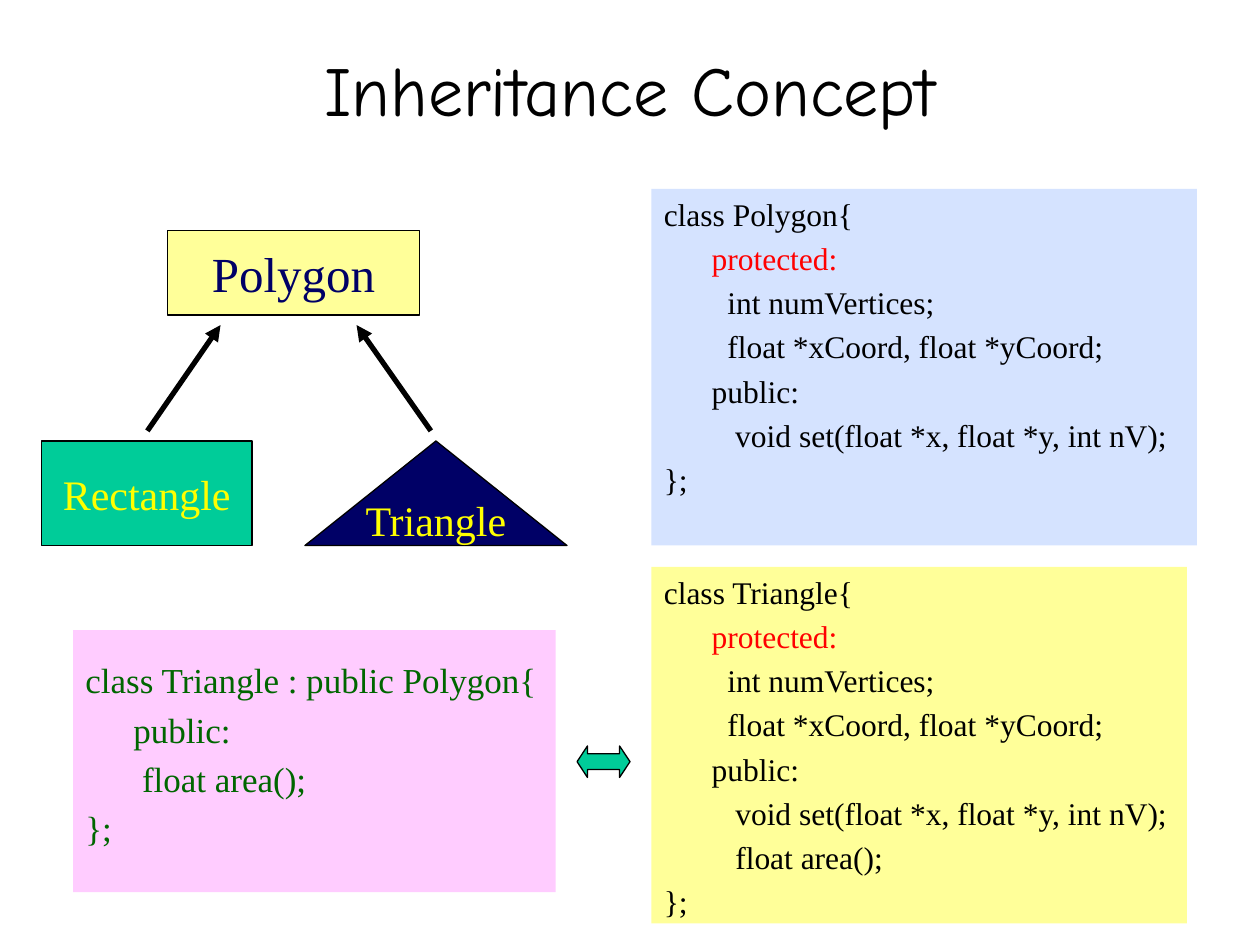
from pptx import Presentation
from pptx.dml.color import RGBColor
from pptx.enum import shapes, text
from pptx.oxml.ns import qn
from pptx.util import Inches, Pt
from lxml import etree

BLACK = RGBColor(0x00, 0x00, 0x00)
RED = RGBColor(0xFF, 0x00, 0x00)
NAVY = RGBColor(0x00, 0x00, 0x66)
TEAL = RGBColor(0x00, 0xCC, 0x99)
YELLOW = RGBColor(0xFF, 0xFF, 0x00)
CREAM = RGBColor(0xFF, 0xFF, 0x99)
PALE_BLUE = RGBColor(0xD5, 0xE3, 0xFF)
PINK = RGBColor(0xFF, 0xCC, 0xFF)
GREEN = RGBColor(0x00, 0x66, 0x00)

SERIF = "Times New Roman"
SHAPE = shapes.MSO_SHAPE
CODE_INDENT = Inches(0.38)

MEMBERS = [
    "\tprotected:",
    "\t  int numVertices;",
    "\t  float *xCoord, float *yCoord;",
    "\tpublic:",
    "\t   void set(float *x, float *y, int nV);",
]
POLYGON_CODE = ["class Polygon{", *MEMBERS, "};"]
FLAT_CODE = ["class Triangle{", *MEMBERS, "\t   float area();", "};"]
DERIVED_CODE = ["class Triangle : public Polygon{", "\tpublic:",
                "\t float area();", "};"]


def set_font(font, size, color, name=SERIF):
    for key, value in {"size": Pt(size), "name": name, "bold": False}.items():
        setattr(font, key, value)
    font.color.rgb = color


def add_box(s, kind, box, fill, outlined=True):
    sp = s.shapes.add_shape(kind, *map(Inches, box))
    sp.shadow.inherit = False
    sp.fill.solid()
    sp.fill.fore_color.rgb = fill
    if outlined:
        sp.line.color.rgb = BLACK
        sp.line.width = Pt(0.75)
    else:
        sp.line.fill.background()
    return sp


def add_node(s, kind, box, fill, label, size, color):
    tf = add_box(s, kind, box, fill).text_frame
    tf.word_wrap = False
    tf.vertical_anchor = text.MSO_ANCHOR.MIDDLE
    p = tf.paragraphs[0]
    p.alignment = text.PP_ALIGN.CENTER
    r = p.add_run()
    r.text = label
    set_font(r.font, size, color)


def add_arrow(s, parent, child):
    """Draw a line from parent to child with its arrowhead at the parent."""
    line = s.shapes.add_connector(shapes.MSO_CONNECTOR.STRAIGHT,
                                  *map(Inches, (*parent, *child)))
    line.line.color.rgb = BLACK
    line.line.width = Pt(3)
    etree.SubElement(line.line._get_or_add_ln(), qn("a:headEnd"), type="triangle")
    etree.SubElement(line._element.spPr, qn("a:effectLst"))


def add_code(s, box, fill, lines, size, color, top=0.05):
    tf = add_box(s, SHAPE.RECTANGLE, box, fill, outlined=False).text_frame
    tf.word_wrap = True
    tf.vertical_anchor = text.MSO_ANCHOR.TOP
    tf.margin_top = Inches(top)
    for i, line in enumerate(lines):
        p = tf.add_paragraph() if i else tf.paragraphs[0]
        p.alignment = text.PP_ALIGN.LEFT
        p.space_before = Pt(size * 0.2 if i else 0)
        pPr = p._p.get_or_add_pPr()
        pPr.set("marL", str(CODE_INDENT))
        pPr.set("indent", str(-CODE_INDENT))
        r = p.add_run()
        r.text = line
        set_font(r.font, size, RED if "protected" in line else color)


def set_title(s, title):
    sp = s.shapes.title
    sp.left, sp.top, sp.width, sp.height = map(Inches, (0.75, 0.33, 8.5, 0.75))
    tf = sp.text_frame
    tf.vertical_anchor = text.MSO_ANCHOR.MIDDLE
    p = tf.paragraphs[0]
    p.alignment = text.PP_ALIGN.CENTER
    r = p.add_run()
    r.text = title
    set_font(r.font, 40, BLACK, "Comic Neue")


def main():
    prs = Presentation()
    prs.slide_width, prs.slide_height = Inches(10), Inches(7.5)
    s = prs.slides.add_slide(prs.slide_layouts[5])
    set_title(s, "Inheritance Concept")

    add_node(s, SHAPE.RECTANGLE, (0.33, 3.5, 1.67, 0.83), TEAL,
             "Rectangle", 24, YELLOW)
    add_node(s, SHAPE.ISOSCELES_TRIANGLE, (2.42, 3.5, 2.08, 0.83), NAVY,
             "Triangle", 24, YELLOW)
    add_node(s, SHAPE.RECTANGLE, (1.33, 1.83, 2, 0.67), CREAM,
             "Polygon", 28, NAVY)
    add_arrow(s, (1.75, 2.58), (1.17, 3.42))
    add_arrow(s, (2.83, 2.58), (3.42, 3.42))

    add_code(s, (5.17, 1.5, 4.33, 2.83), PALE_BLUE, POLYGON_CODE, 18, BLACK)
    add_code(s, (0.58, 5, 3.83, 2.08), PINK, DERIVED_CODE, 20, GREEN, top=0.23)
    equivalence = add_box(s, SHAPE.LEFT_RIGHT_ARROW, (4.58, 5.92, 0.42, 0.25), TEAL)
    equivalence.adjustments[1] = 0.33
    add_code(s, (5.17, 4.5, 4.25, 2.83), CREAM, FLAT_CODE, 18, BLACK)

    prs.save("out.pptx")


if __name__ == "__main__":
    main()
